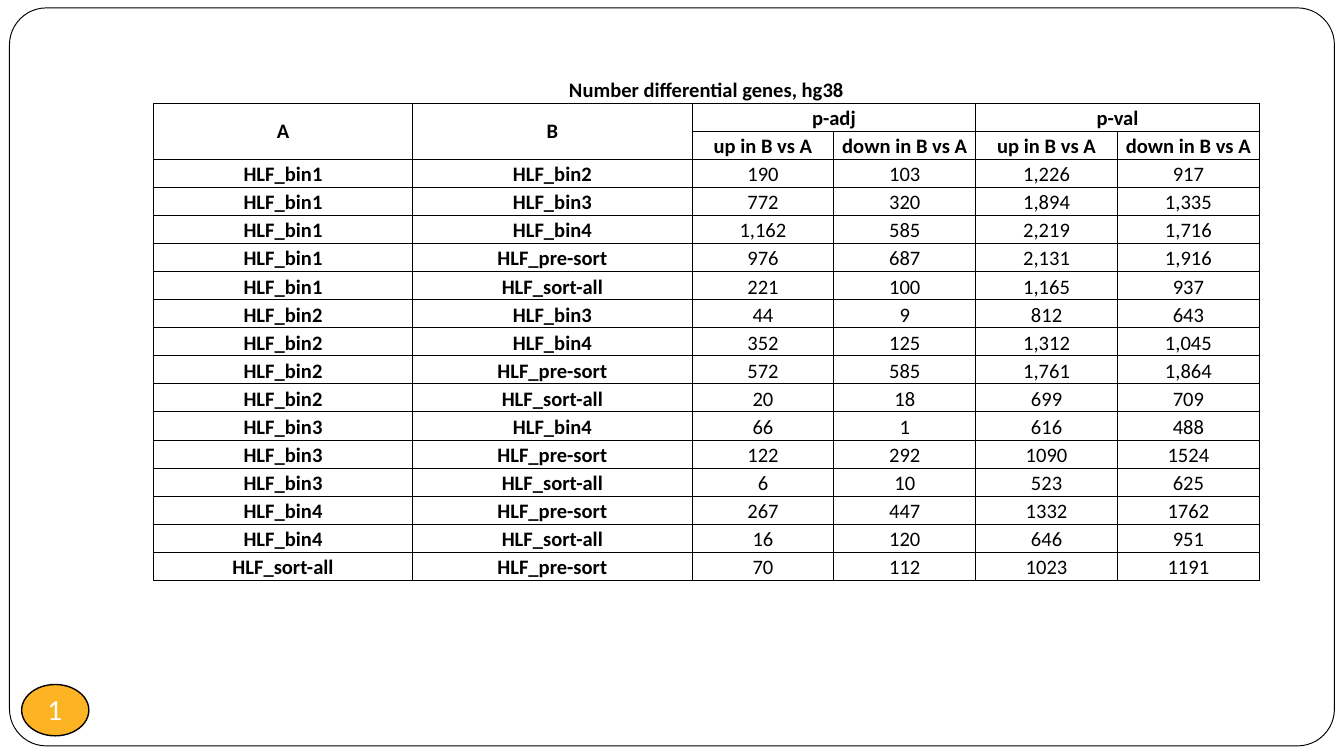
from typing import NamedTuple

import pptx
import pptx.dml.color
import pptx.enum.shapes
import pptx.enum.text
import pptx.oxml
import pptx.oxml.ns
import pptx.util

Cm = pptx.util.Cm
Pt = pptx.util.Pt
MIDDLE = pptx.enum.text.MSO_ANCHOR.MIDDLE
BOTTOM = pptx.enum.text.MSO_ANCHOR.BOTTOM

BLACK, WHITE, AMBER = "000000", "FFFFFF", "FCB424"
COLUMN_WIDTHS = [4.9, 5.28] + [2.68] * 4
ROW_HEIGHT = 0.53
HEADER_ROWS = 3
NAME_COLUMNS = 2


class Outline(NamedTuple):
    kind: pptx.enum.shapes.MSO_SHAPE
    left: float
    top: float
    width: float
    height: float
    fill: str
    line_width: float


class Comparison(NamedTuple):
    a: str
    b: str
    adjusted_up: str
    adjusted_down: str
    value_up: str
    value_down: str


FRAME = Outline(pptx.enum.shapes.MSO_SHAPE.ROUNDED_RECTANGLE,
                0.18, 0.15, 25.04, 13.94, WHITE, 0.5)
BADGE = Outline(pptx.enum.shapes.MSO_SHAPE.OVAL,
                0.41, 12.93, 1.27, 0.97, AMBER, 0.75)

COMPARISONS = [
    Comparison("HLF_bin1", "HLF_bin2", "190", "103", "1,226", "917"),
    Comparison("HLF_bin1", "HLF_bin3", "772", "320", "1,894", "1,335"),
    Comparison("HLF_bin1", "HLF_bin4", "1,162", "585", "2,219", "1,716"),
    Comparison("HLF_bin1", "HLF_pre-sort", "976", "687", "2,131", "1,916"),
    Comparison("HLF_bin1", "HLF_sort-all", "221", "100", "1,165", "937"),
    Comparison("HLF_bin2", "HLF_bin3", "44", "9", "812", "643"),
    Comparison("HLF_bin2", "HLF_bin4", "352", "125", "1,312", "1,045"),
    Comparison("HLF_bin2", "HLF_pre-sort", "572", "585", "1,761", "1,864"),
    Comparison("HLF_bin2", "HLF_sort-all", "20", "18", "699", "709"),
    Comparison("HLF_bin3", "HLF_bin4", "66", "1", "616", "488"),
    Comparison("HLF_bin3", "HLF_pre-sort", "122", "292", "1090", "1524"),
    Comparison("HLF_bin3", "HLF_sort-all", "6", "10", "523", "625"),
    Comparison("HLF_bin4", "HLF_pre-sort", "267", "447", "1332", "1762"),
    Comparison("HLF_bin4", "HLF_sort-all", "16", "120", "646", "951"),
    Comparison("HLF_sort-all", "HLF_pre-sort", "70", "112", "1023", "1191"),
]
HEADERS = [
    ("Number differential genes, hg38", "", "", "", "", ""),
    ("A", "B", "p-adj", "", "p-val", ""),
    ("", "") + ("up in B vs A", "down in B vs A") * 2,
]
# First and last cell (row, column) of each merged header
MERGES = [((0, 0), (0, 5)), ((1, 0), (2, 0)), ((1, 1), (2, 1)),
          ((1, 2), (1, 3)), ((1, 4), (1, 5))]


def color(value: str) -> pptx.dml.color.RGBColor:
    return pptx.dml.color.RGBColor.from_string(value)


def write(para, text: str, face: str, size: float, ink: str, bold: bool = False) -> None:
    para.text = text
    para.alignment = pptx.enum.text.PP_ALIGN.CENTER
    para.font.name = face
    para.font.size = Pt(size)
    para.font.bold = bold
    para.font.color.rgb = color(ink)


def draw_outline(page, outline: Outline):
    shape = page.shapes.add_shape(outline.kind, Cm(outline.left), Cm(outline.top),
                                  Cm(outline.width), Cm(outline.height))
    shape.shadow.inherit = False
    shape.fill.solid()
    shape.fill.fore_color.rgb = color(outline.fill)
    shape.line.color.rgb = color(BLACK)
    shape.line.width = Pt(outline.line_width)
    return shape


def set_borders(cell, visible: str) -> None:
    """Rule the sides named in visible (L, R, T, B) and clear the others."""
    properties = cell._tc.get_or_add_tcPr()
    for side in "LRTB":
        paint = (f'<a:solidFill><a:srgbClr val="{BLACK}"/></a:solidFill>'
                 if side in visible else "<a:noFill/>")
        properties.append(pptx.oxml.parse_xml(
            f'<a:ln{side} {pptx.oxml.ns.nsdecls("a")} w="{Pt(0.5)}">{paint}</a:ln{side}>'))


def draw_table(page, left: float, top: float) -> None:
    rows = HEADERS + COMPARISONS
    table = page.shapes.add_table(
        len(rows), len(COLUMN_WIDTHS), Cm(left), Cm(top),
        Cm(sum(COLUMN_WIDTHS)), Cm(ROW_HEIGHT * len(rows))).table
    table.first_row = table.horz_banding = False
    for column, width in zip(table.columns, COLUMN_WIDTHS):
        column.width = Cm(width)
    for row in table.rows:
        row.height = Cm(ROW_HEIGHT)

    for i, values in enumerate(rows):
        for j, text in enumerate(values):
            cell = table.cell(i, j)
            cell.margin_left = cell.margin_right = cell.margin_top = Cm(0.02)
            cell.margin_bottom = 0
            spans_two_rows = i == 1 and j < NAME_COLUMNS
            cell.vertical_anchor = MIDDLE if spans_two_rows else BOTTOM
            bold = i < HEADER_ROWS or j < NAME_COLUMNS
            write(cell.text_frame.paragraphs[0], text, "Calibri", 11, BLACK, bold)
            set_borders(cell, "B" if i == 0 else "LRTB")
            cell.fill.background()
    for first, last in MERGES:
        table.cell(*first).merge(table.cell(*last))


def main() -> None:
    deck = pptx.Presentation()
    deck.slide_width, deck.slide_height = Cm(25.4), Cm(14.28)
    page = deck.slides.add_slide(deck.slide_layouts[6])

    # Rounded page frame
    draw_outline(page, FRAME).adjustments[0] = 0.05

    # Page number badge
    box = draw_outline(page, BADGE).text_frame
    box.margin_left = box.margin_right = box.margin_top = box.margin_bottom = 0
    box.word_wrap = False
    box.vertical_anchor = MIDDLE
    write(box.paragraphs[0], "1", "Lato", 14, WHITE)

    # Differential gene counts
    draw_table(page, left=2.9, top=1.42)

    deck.save("out.pptx")


if __name__ == "__main__":
    main()
